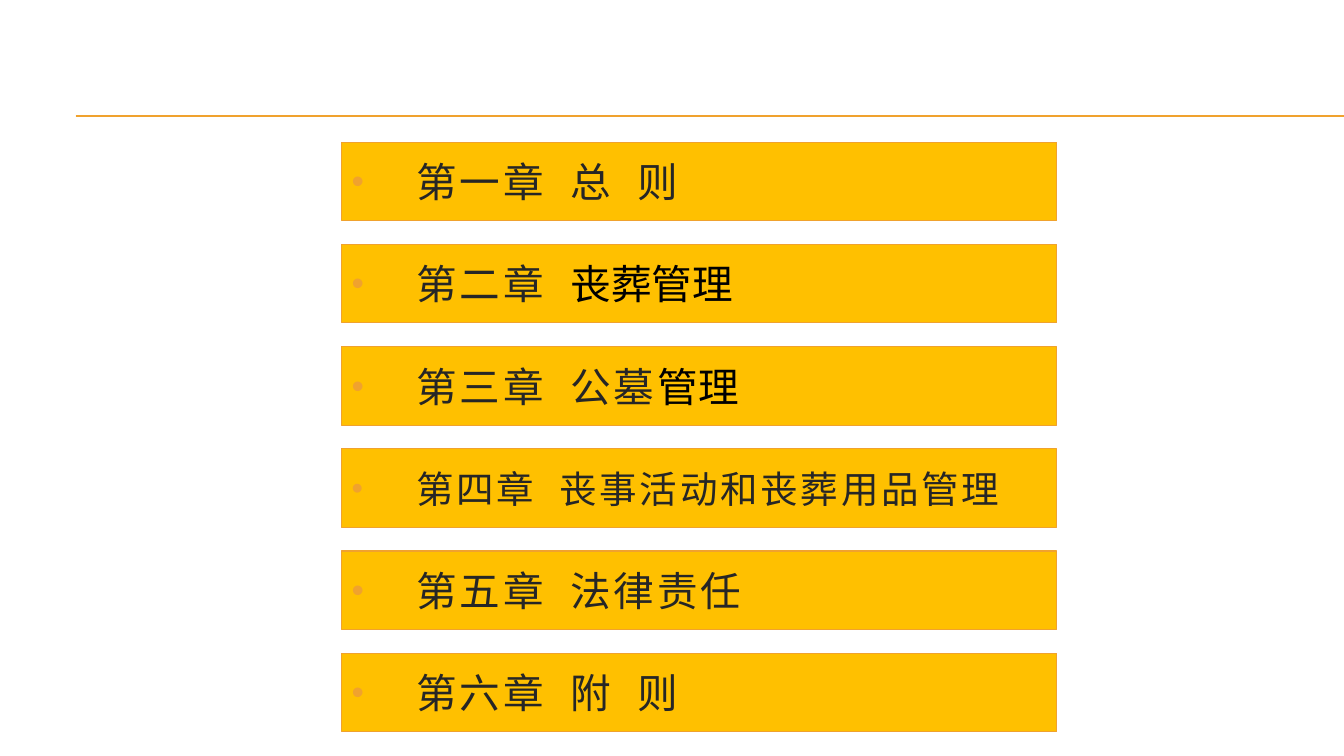
import pptx
import pptx.util
import pptx.dml.color
import pptx.enum.shapes
import pptx.enum.text
import pptx.oxml.ns
from dataclasses import dataclass
from lxml import etree

Inches = pptx.util.Inches
Pt = pptx.util.Pt


@dataclass(frozen=True)
class Theme:
    gold: str = "FFC000"
    amber: str = "F0A22E"
    dark: str = "262626"
    black: str = "000000"
    font: str = "Noto Sans CJK SC"
    bullet: str = "Arial"
    size: float = 29
    small: float = 26.8
    rule: float = 0.75
    track: int = 200


def color(code):
    return pptx.dml.color.RGBColor.from_string(code)


def child(node, tag, **attrs):
    return etree.SubElement(node, pptx.oxml.ns.qn(tag), attrs)


class Deck:
    def __init__(self, theme):
        self.theme = theme
        self.file = pptx.Presentation()
        self.file.slide_width = Inches(13.33)
        self.file.slide_height = Inches(7.5)
        self.slide = self.file.slides.add_slide(self.file.slide_layouts[6])

    def rule(self, left, right, top):
        line = self.slide.shapes.add_connector(
            pptx.enum.shapes.MSO_CONNECTOR.STRAIGHT,
            Inches(left), Inches(top), Inches(right), Inches(top))
        line.line.color.rgb = color(self.theme.amber)
        line.line.width = Pt(self.theme.rule)
        child(line._element.spPr, "a:effectLst")

    def bar(self, left, top, width, height, text, accent, size):
        box = self.slide.shapes.add_shape(
            pptx.enum.shapes.MSO_SHAPE.RECTANGLE,
            Inches(left), Inches(top), Inches(width), Inches(height))
        box.shadow.inherit = False
        box.fill.solid()
        box.fill.fore_color.rgb = color(self.theme.gold)
        box.line.color.rgb = color(self.theme.amber)
        box.line.width = Pt(self.theme.rule)
        frame = box.text_frame
        frame.word_wrap = True
        frame.vertical_anchor = pptx.enum.text.MSO_ANCHOR.MIDDLE
        para = frame.paragraphs[0]
        para.text = text
        para.alignment = pptx.enum.text.PP_ALIGN.LEFT
        self.bullet(para)
        self.style(para.runs[0], size, self.theme.dark, self.theme.track)
        if accent:
            run = para.add_run()
            run.text = accent
            self.style(run, size, self.theme.black, 0)

    def bullet(self, para):
        props = para._p.get_or_add_pPr()
        props.set("marL", str(Inches(0.64)))
        props.set("indent", str(-Inches(0.64)))
        child(child(props, "a:buClr"), "a:srgbClr", val=self.theme.amber)
        child(props, "a:buSzPct", val="87000")
        child(props, "a:buFont", typeface=self.theme.bullet)
        child(props, "a:buChar", char="•")

    def style(self, run, size, code, track):
        run.font.size = Pt(size)
        run.font.bold = False
        run.font.color.rgb = color(code)
        run.font.name = self.theme.font
        props = run._r.get_or_add_rPr()
        props.set("spc", str(track))
        child(props, "a:ea", typeface=self.theme.font)


def main():
    theme = Theme()
    deck = Deck(theme)

    # Header rules
    for top in (1.15, 1.16):
        deck.rule(0.75, 13.33, top)

    # Chapter bars: text, black ending, type size
    rows = [
        ("第一章  总  则", "", theme.size),
        ("第二章  ", "丧葬管理", theme.size),
        ("第三章  公墓", "管理", theme.size),
        ("第四章  丧事活动和丧葬用品管理", "", theme.small),
        ("第五章  法律责任", "", theme.size),
        ("第六章  附  则", "", theme.size),
    ]
    first, last = 1.41, 6.48
    pitch = (last - first) / (len(rows) - 1)
    for i, (text, accent, size) in enumerate(rows):
        deck.bar(3.39, first + i * pitch, 7.09, 0.78, text, accent, size)

    deck.file.save("out.pptx")


if __name__ == "__main__":
    main()
